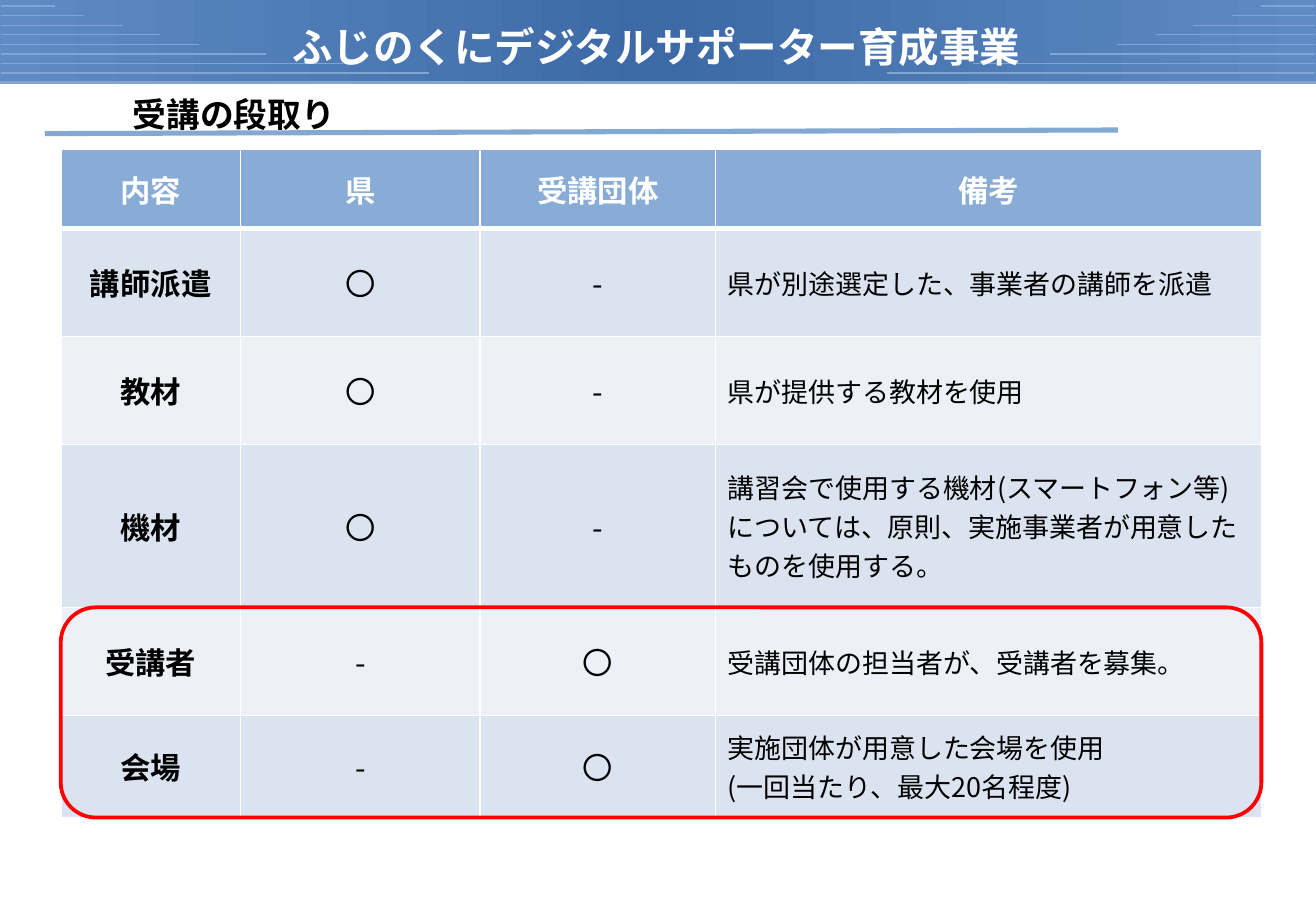
from lxml.etree import SubElement
from pptx import Presentation
from pptx.dml.color import RGBColor
from pptx.enum.shapes import MSO_CONNECTOR, MSO_SHAPE
from pptx.enum.text import MSO_ANCHOR, PP_ALIGN
from pptx.oxml.ns import qn
from pptx.util import Inches, Pt

LINE = MSO_CONNECTOR.STRAIGHT
RECT, ROUND = MSO_SHAPE.RECTANGLE, MSO_SHAPE.ROUNDED_RECTANGLE
LEFT, CENTER = PP_ALIGN.LEFT, PP_ALIGN.CENTER
TOP, MIDDLE = MSO_ANCHOR.TOP, MSO_ANCHOR.MIDDLE

FONT = "Noto Sans CJK JP"
WHITE, BLACK, RED = "FFFFFF", "000000", "FF0000"
EDGE, MID, RAY, RULE = "5F8AC3", "3D6AA7", "83A4D1", "83A8D2"
HEAD, BANDS = "88ACD5", ("DAE3EF", "EDF1F7")

RAYS = (4.06, 6.28, 9.23, 12.1, 15.05, 20.13, 25.95, 32.5)
COLS = (13.67, 18.19, 17.91, 41.46)
ROWS = (8.67, 11.87, 11.87, 17.87, 11.87, 11.2)
CELLS = (
    ("内容", "県", "受講団体", "備考"),
    ("講師派遣", "〇", "-", "県が別途選定した、事業者の講師を派遣"),
    ("教材", "〇", "-", "県が提供する教材を使用"),
    ("機材", "〇", "-",
     "講習会で使用する機材(スマートフォン等)については、"
     "原則、実施事業者が用意したものを使用する。"),
    ("受講者", "-", "〇", "受講団体の担当者が、受講者を募集。"),
    ("会場", "-", "〇",
     "実施団体が用意した会場を使用\n(一回当たり、最大20名程度)"),
)


def ink(code):
    """Turn a hex string into a colour."""
    return RGBColor.from_string(code)


def write(frame, text, size=18, color=BLACK, bold=False, align=LEFT, anchor=MIDDLE):
    """Fill a text frame, one paragraph per line of text."""
    frame.word_wrap = True
    frame.vertical_anchor = anchor
    for i, words in enumerate(text.split("\n")):
        para = frame.add_paragraph() if i else frame.paragraphs[0]
        para.alignment = align
        run = para.add_run()
        run.text = words
        font = run.font
        font.size, font.bold, font.name = Pt(size), bold, FONT
        font.color.rgb = ink(color)
        SubElement(font._element, qn("a:ea"), typeface=FONT)


def border(cell, **widths):
    """Draw white cell borders, keyed by side, in points."""
    props = cell._tc.get_or_add_tcPr()
    for side, width in widths.items():
        line = SubElement(props, qn("a:ln" + side), w=str(Pt(width)))
        fill = SubElement(line, qn("a:solidFill"))
        SubElement(fill, qn("a:srgbClr"), val=WHITE)


class Deck:
    """Holds the slide and places elements by percent of its size."""

    def __init__(self, wide, high):
        """Open a title-only slide of the given size in inches."""
        self.file = Presentation()
        self.wide, self.high = Inches(wide), Inches(high)
        self.file.slide_width, self.file.slide_height = self.wide, self.high
        self.slide = self.file.slides.add_slide(self.file.slide_layouts[5])
        self.shapes = self.slide.shapes

    def across(self, share):
        """Return a percent of the slide width."""
        return round(self.wide * share / 100)

    def down(self, share):
        """Return a percent of the slide height."""
        return round(self.high * share / 100)

    def box(self, x, y, w, h):
        """Return left, top, width and height as lengths."""
        return self.across(x), self.down(y), self.across(w), self.down(h)

    def title(self, text, *place, **style):
        """Place the title in front of what is drawn so far."""
        shape = self.shapes.title
        shape.left, shape.top, shape.width, shape.height = self.box(*place)
        self.shapes._spTree.append(shape._element)
        write(shape.text_frame, text, **style)

    def label(self, text, *place, indent=0, **style):
        """Add a text box with a left indent."""
        frame = self.shapes.add_textbox(*self.box(*place)).text_frame
        frame.margin_left = self.across(indent)
        write(frame, text, **style)

    def band(self, *place, colors):
        """Add a rectangle with an even gradient from left to right."""
        shape = self.shapes.add_shape(RECT, *self.box(*place))
        shape.shadow.inherit = False
        shape.line.fill.background()
        shape.fill.gradient()
        shape.fill.gradient_angle = 0
        stops = shape._element.spPr.find(".//" + qn("a:gsLst"))
        stops.clear()
        for i, color in enumerate(colors):
            spot = str(100000 * i // (len(colors) - 1))
            stop = SubElement(stops, qn("a:gs"), pos=spot)
            SubElement(stop, qn("a:srgbClr"), val=color)

    def line(self, x, y, end, drop, color, width):
        """Add a straight line between two points."""
        line = self.shapes.add_connector(
            LINE, self.across(x), self.down(y), self.across(end), self.down(drop))
        line.line.color.rgb = ink(color)
        line.line.width = Pt(width)
        SubElement(line._element.spPr, qn("a:effectLst"))

    def frame(self, *place, color, width):
        """Add an unfilled rounded outline."""
        shape = self.shapes.add_shape(ROUND, *self.box(*place))
        shape.shadow.inherit = False
        shape.fill.background()
        shape.line.color.rgb = ink(color)
        shape.line.width = Pt(width)

    def table(self, x, y, cols, rows, cells):
        """Add a table with a header row and banded body."""
        place = self.box(x, y, sum(cols), sum(rows))
        grid = self.shapes.add_table(len(rows), len(cols), *place).table
        grid.horz_banding = False
        for col, share in zip(grid.columns, cols):
            col.width = self.across(share)
        for r, share in enumerate(rows):
            grid.rows[r].height = self.down(share)
            for c, text in enumerate(cells[r]):
                cell = grid.cell(r, c)
                border(cell, L=1, R=1, T=3 if r == 1 else 1, B=1 if r else 3)
                cell.fill.solid()
                cell.fill.fore_color.rgb = ink(BANDS[(r - 1) % 2] if r else HEAD)
                note = r > 0 and c == 3
                write(cell.text_frame, text, size=16 if note else 18,
                      color=BLACK if r else WHITE, bold=r == 0 or c == 0,
                      align=LEFT if note else CENTER)
                cell.vertical_anchor = MIDDLE


def main():
    """Build the slide and save it."""
    deck = Deck(10.83, 7.5)
    deck.band(0, 0, 100, 9.07, colors=(EDGE, MID, EDGE))
    for i, reach in enumerate(RAYS):
        y = 0.67 + 1.05 * i
        deck.line(0.09, y, 0.09 + reach, y, RAY, 0.75)
        deck.line(99.91, y, 99.91 - reach, y, RAY, 0.75)
    deck.line(0, 9.07, 100, 9.07, RAY, 2.25)
    deck.title("ふじのくにデジタルサポーター育成事業", -0.18, 1.73, 100.1, 6.67,
               size=24, color=WHITE, bold=True, align=CENTER)
    deck.label("受講の段取り", -0.09, 9.6, 81.35, 5.87, indent=10.16,
               size=20, bold=True, anchor=TOP)
    deck.line(3.42, 14.67, 84.95, 14.27, RULE, 3)
    deck.table(4.62, 16.4, COLS, ROWS, CELLS)
    deck.frame(4.62, 66.67, 91.23, 23.07, color=RED, width=2.25)
    deck.file.save("out.pptx")


if __name__ == "__main__":
    main()
